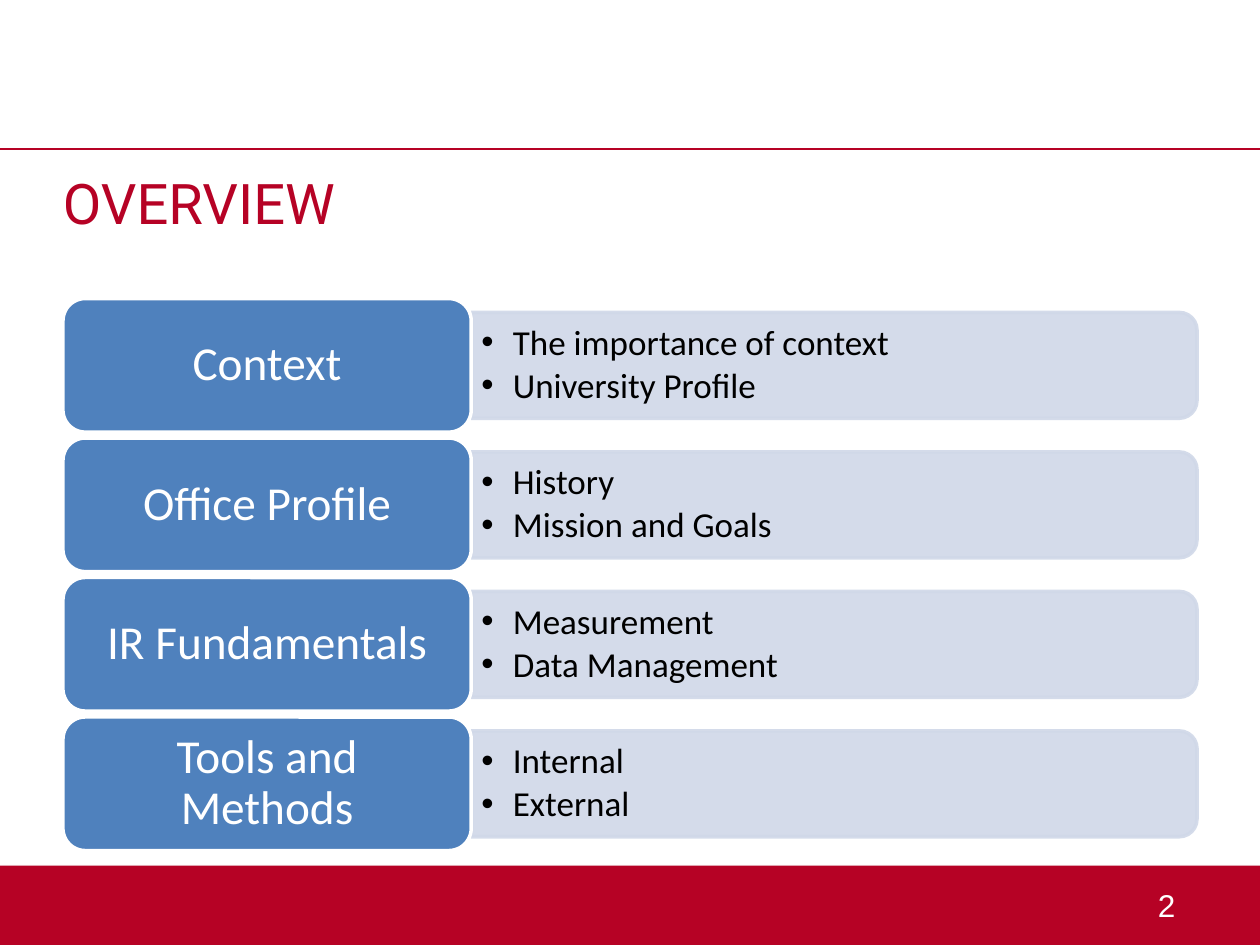
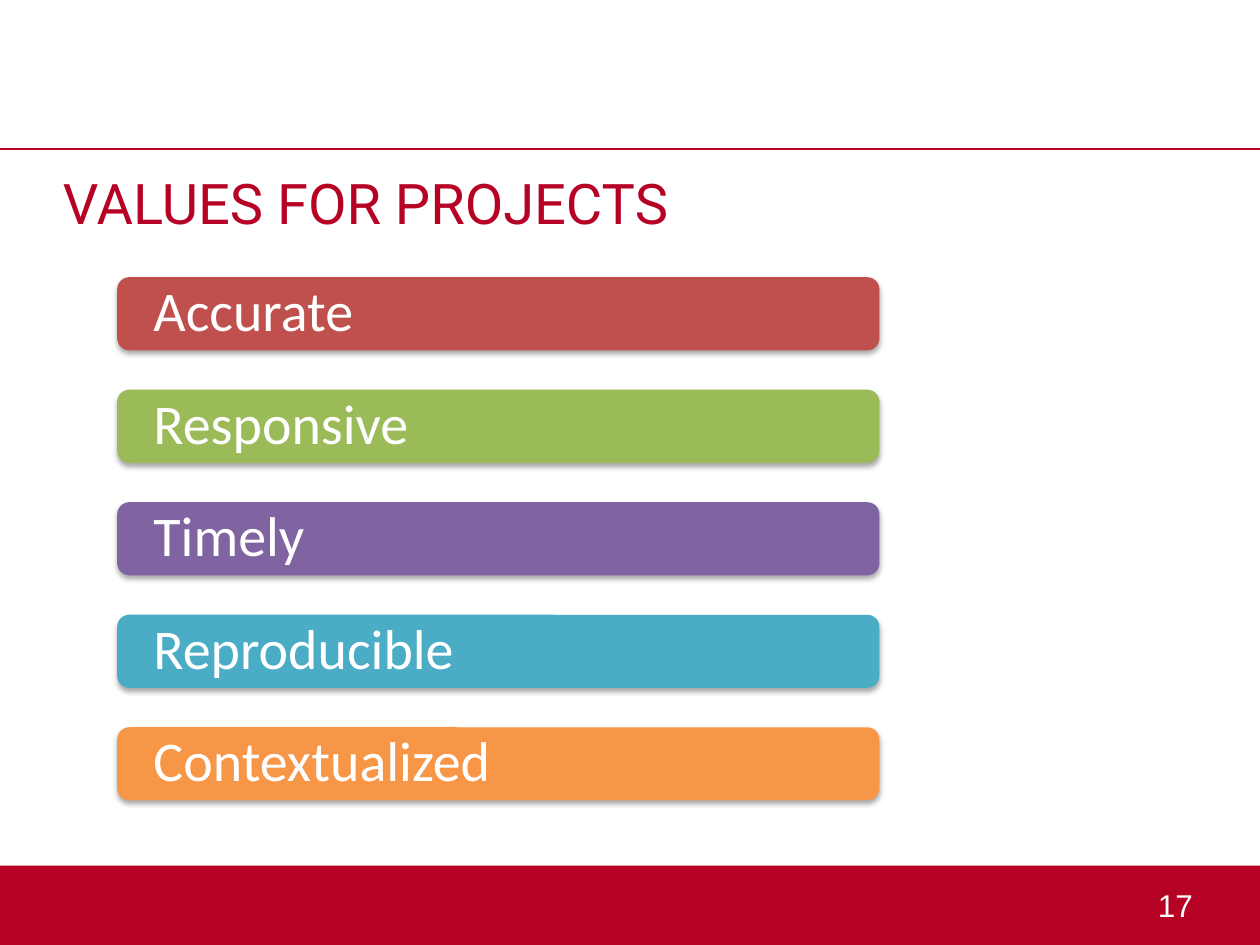
"""Build the overview and project values slides."""
from lxml import etree
from pptx import Presentation
from pptx.dml.color import RGBColor
from pptx.enum.shapes import MSO_CONNECTOR, MSO_SHAPE
from pptx.enum.text import MSO_ANCHOR, PP_ALIGN
from pptx.oxml.ns import qn
from pptx.util import Inches, Pt

RECT, ROUND = MSO_SHAPE.RECTANGLE, MSO_SHAPE.ROUNDED_RECTANGLE
HALF = MSO_SHAPE.ROUND_2_SAME_RECTANGLE
STRAIGHT = MSO_CONNECTOR.STRAIGHT
TOP, MIDDLE = MSO_ANCHOR.TOP, MSO_ANCHOR.MIDDLE
LEFT, CENTER = PP_ALIGN.LEFT, PP_ALIGN.CENTER


class Theme:
    red, blue, pale, white, black = "B60225", "4F81BD", "D0D8E8", "FFFFFF", "000000"
    bars = ["C0504D", "9BBB59", "8064A2", "4BACC6", "F79646"]
    title = dict(font=dict(name="Roboto", size=Pt(32)), color=red, pad=(0, 0.05),
                 anchor=TOP, para=dict(alignment=LEFT))
    number = dict(font=dict(name="Arial", size=Pt(18)), color=white, pad=(0.1, 0.05),
                  anchor=TOP, para=dict(alignment=LEFT))
    label = dict(font=dict(name="Calibri", size=Pt(27)), color=white, pad=(0.16, 0.06),
                 anchor=MIDDLE, para=dict(alignment=CENTER, line_spacing=0.9))
    item = dict(font=dict(name="Calibri", size=Pt(20)), color=black, pad=(0.08, 0.04),
                anchor=MIDDLE, bullet=True,
                para=dict(alignment=LEFT, line_spacing=0.9, space_after=Pt(3)))
    bar = dict(font=dict(name="Calibri", size=Pt(32)), color=white, pad=(0.26, 0),
               anchor=MIDDLE, para=dict(alignment=LEFT, line_spacing=0.9))


def write(shape, lines, style):
    frame = shape.text_frame
    side, edge = map(Inches, style["pad"])
    layout = dict(word_wrap=True, vertical_anchor=style["anchor"], margin_left=side,
                  margin_right=side, margin_top=edge, margin_bottom=edge)
    for key, value in layout.items():
        setattr(frame, key, value)
    for at, line in enumerate(lines):
        para = frame.add_paragraph() if at else frame.paragraphs[0]
        for key, value in style["para"].items():
            setattr(para, key, value)
        if style.get("bullet"):
            props = para._p.get_or_add_pPr()
            props.set("marL", str(Inches(0.25)))
            props.set("indent", str(-Inches(0.25)))
            etree.SubElement(props, qn("a:buFont"), typeface="Arial")
            etree.SubElement(props, qn("a:buChar"), char="•")
        run = para.add_run()
        run.text = line
        for key, value in style["font"].items():
            setattr(run.font, key, value)
        run.font.color.rgb = RGBColor.from_string(style["color"])


def draw(slide, kind, box, fill, line=None, alpha=None, shade=False):
    shape = slide.shapes.add_shape(kind, *map(Inches, box))
    shape.fill.solid()
    shape.fill.fore_color.rgb = RGBColor.from_string(fill)
    shape.line.fill.background()
    if line:
        shape.line.color.rgb = RGBColor.from_string(line)
        shape.line.width = Pt(2)
    props = shape._element.spPr
    if alpha:
        for color in props.iter(qn("a:srgbClr")):
            etree.SubElement(color, qn("a:alpha"), val=str(alpha * 1000))
    shape.shadow.inherit = False
    if shade:
        cast = etree.SubElement(props.find(qn("a:effectLst")), qn("a:outerShdw"),
                                blurRad=str(Pt(3.1)), dist=str(Pt(1.8)),
                                dir="5400000", rotWithShape="0")
        color = etree.SubElement(cast, qn("a:srgbClr"), val=Theme.black)
        etree.SubElement(color, qn("a:alpha"), val="35000")
    return shape


deck = Presentation()
deck.slide_width, deck.slide_height = Inches(10), Inches(7.5)

slides = []
for title, number in [("OVERVIEW", "2"), ("VALUES FOR PROJECTS", "17")]:
    slide = deck.slides.add_slide(deck.slide_layouts[6])
    draw(slide, RECT, (0, 6.87, 10, 0.63), Theme.red, shade=True)
    rule = slide.shapes.add_connector(STRAIGHT, 0, Inches(1.18), Inches(10), Inches(1.18))
    rule.line.color.rgb = RGBColor.from_string(Theme.red)
    rule.line.width = Pt(1)
    etree.SubElement(rule._element.spPr, qn("a:effectLst"))
    for text, box, style in [(number, (9.09, 6.98, 0.61, 0.4), Theme.number),
                             (title, (0.5, 1.29, 9, 0.87), Theme.title)]:
        write(slide.shapes.add_textbox(*map(Inches, box)), [text], style)
    slides.append(slide)
plan, values = slides

topics = {
    "Context": ["The importance of context", "University Profile"],
    "Office Profile": ["History", "Mission and Goals"],
    "IR Fundamentals": ["Measurement", "Data Management"],
    "Tools and Methods": ["Internal", "External"],
}
for row, (topic, items) in enumerate(topics.items()):
    top = 2.37 + row * 1.107
    panel = draw(plan, HALF, (6.2, top - 2.35, 0.84, 5.76), Theme.pale, Theme.pale, alpha=90)
    panel.rotation = 90
    box = plan.shapes.add_textbox(*map(Inches, (3.74, top + 0.15, 5.72, 0.76)))
    write(box, items, Theme.item)
    label = draw(plan, ROUND, (0.5, top, 3.24, 1.06), Theme.blue, Theme.white)
    write(label, [topic], Theme.label)

names = ["Accurate", "Responsive", "Timely", "Reproducible", "Contextualized"]
for row, (name, color) in enumerate(zip(names, Theme.bars)):
    bar = draw(values, ROUND, (0.93, 2.2 + row * 0.893, 6.05, 0.58), color, shade=True)
    write(bar, [name], Theme.bar)

deck.save("out.pptx")
